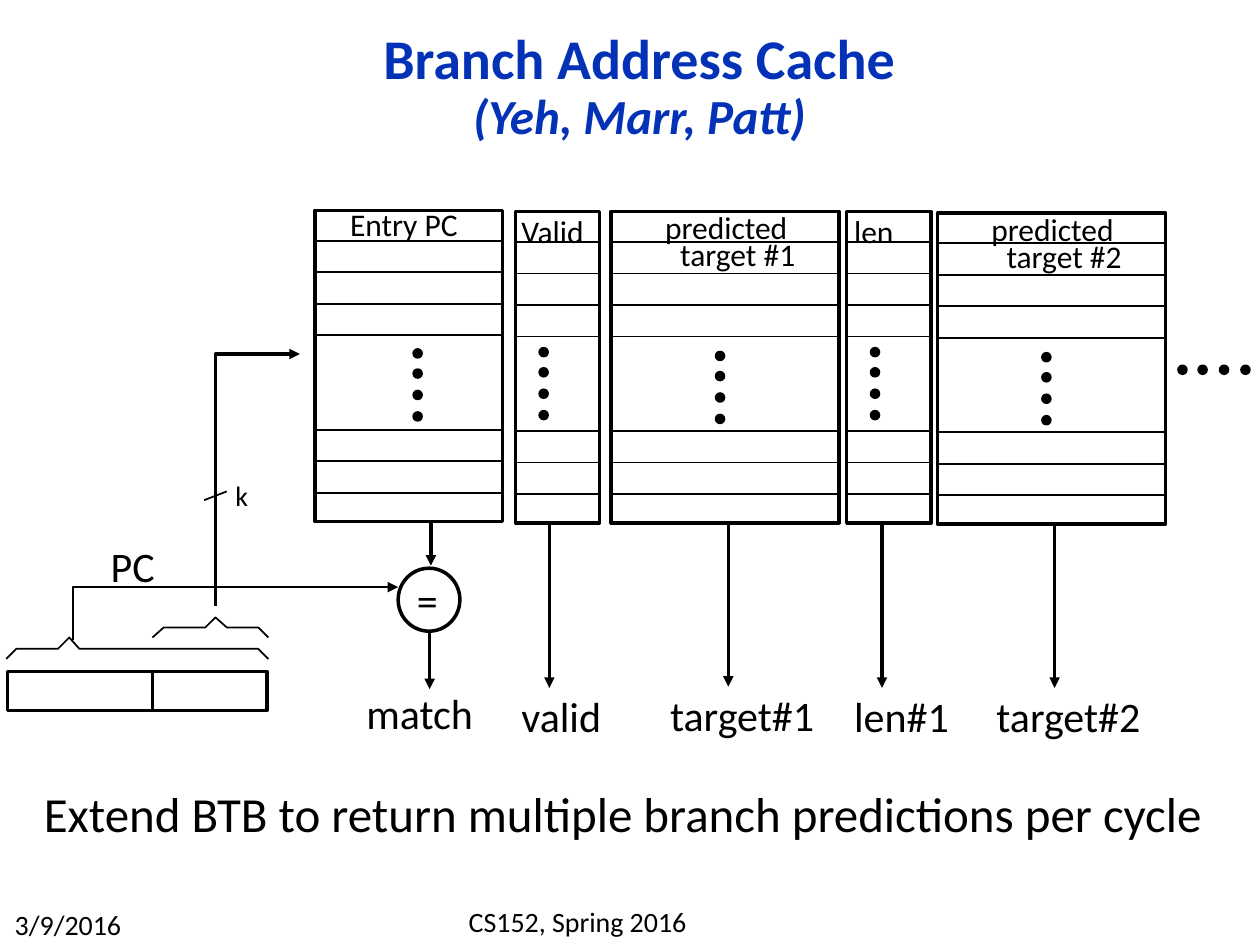
"""Build the Branch Address Cache slide."""
from typing import NamedTuple

from lxml import etree
from pptx import Presentation
from pptx.dml.color import RGBColor
from pptx.enum.shapes import MSO_CONNECTOR, MSO_SHAPE
from pptx.enum.text import MSO_ANCHOR, MSO_AUTO_SIZE, PP_ALIGN
from pptx.oxml.ns import qn
from pptx.util import Emu, Pt

LINE = MSO_CONNECTOR.STRAIGHT
RECT, OVAL = MSO_SHAPE.RECTANGLE, MSO_SHAPE.OVAL
LEFT, CENTER = PP_ALIGN.LEFT, PP_ALIGN.CENTER
MIDDLE, FIXED = MSO_ANCHOR.MIDDLE, MSO_AUTO_SIZE.NONE
PX = 9144
FONT = "Calibri"
COLORS = {"ink": "000000", "paper": "FFFFFF", "title": "0332B7"}
ROWS = (24, 49, 74, 99, 174, 199, 224)
TALL, DOT = 247, 7


class Label(NamedTuple):
    text: str
    x: int
    y: int
    w: int
    h: int
    size: int
    align: PP_ALIGN = LEFT
    wrap: bool = False


class Column(NamedTuple):
    x: int
    y: int
    w: int
    dot_x: int
    dot_y: int
    out_x: int
    out_y: int


class Path(NamedTuple):
    points: tuple
    weight: float
    arrow: bool


COLUMNS = (
    Column(250, 167, 149, 328, 277, 342, 449),
    Column(409, 168, 67, 428, 276, 436, 546),
    Column(485, 168, 181, 568, 279, 578, 545),
    Column(672, 168, 67, 691, 276, 700, 546),
    Column(744, 169, 181, 827, 280, 837, 546),
)
LABELS = (
    Label("3/9/2016", 1, 715, 106, 37, 16, CENTER),
    Label("CS152, Spring 2016", 292, 713, 333, 37, 16, CENTER, True),
    Label("PC", 78, 424, 55, 50, 24),
    Label("k", 177, 375, 30, 37, 16),
    Label("=", 321, 451, 37, 50, 24),
    Label("Entry PC", 268, 158, 107, 40, 18),
    Label("Valid", 404, 163, 71, 40, 18),
    Label("predicted", 518, 160, 119, 40, 18),
    Label("target #1", 530, 182, 113, 40, 18),
    Label("len", 668, 163, 52, 40, 18),
    Label("predicted", 777, 162, 119, 40, 18),
    Label("target #2", 789, 183, 113, 40, 18),
    Label("match", 281, 541, 106, 50, 24),
    Label("valid", 404, 543, 84, 50, 24),
    Label("target#1", 522, 542, 137, 50, 24),
    Label("len#1", 668, 543, 96, 50, 24),
    Label("target#2", 781, 543, 137, 50, 24),
    Label("Extend BTB to return multiple branch predictions per cycle",
          25, 617, 953, 57, 28, wrap=True),
)
PATHS = (
    Path(((121, 506), (130, 498), (163, 498), (171, 490), (180, 498),
          (205, 498), (213, 506)), 1, False),
    Path(((5, 523), (13, 515), (46, 515), (55, 506), (63, 515),
          (205, 515), (213, 523)), 1, False),
    Path(((171, 481), (171, 281), (238, 281)), 2, True),
    Path(((58, 508), (58, 466), (316, 466)), 1.5, True),
)


def tint(name: str) -> RGBColor:
    return RGBColor.from_string(COLORS[name])


def write(para, text: str, *, size: int, color: str = "ink",
          bold: bool = False, italic: bool = False) -> None:
    run = para.add_run()
    run.text = text
    font = run.font
    font.name, font.size = FONT, Pt(size)
    font.bold, font.italic = bold, italic
    font.color.rgb = tint(color)


def ink(item, weight: float, arrow: bool = False) -> None:
    item.line.color.rgb = tint("ink")
    item.line.width = Pt(weight)
    if arrow:
        ln = item.line._get_or_add_ln()
        etree.SubElement(ln, qn("a:tailEnd"), type="triangle")


def shape(slide, kind: MSO_SHAPE, box: tuple, fill: str, weight: float) -> None:
    item = slide.shapes.add_shape(kind, *(Emu(v * PX) for v in box))
    item.shadow.inherit = False
    item.fill.solid()
    item.fill.fore_color.rgb = tint(fill)
    ink(item, weight)


def line(slide, ends: tuple, weight: float, arrow: bool = False) -> None:
    item = slide.shapes.add_connector(LINE, *(Emu(v * PX) for v in ends))
    ink(item, weight, arrow)
    etree.SubElement(item._element.spPr, qn("a:effectLst"))


def trace(slide, path: Path) -> None:
    pen = slide.shapes.build_freeform(*path.points[0], scale=PX)
    pen.add_line_segments(path.points[1:], close=False)
    item = pen.convert_to_shape()
    item.shadow.inherit = False
    item.fill.background()
    ink(item, path.weight, path.arrow)


def label(slide, tag: Label) -> None:
    box = slide.shapes.add_textbox(*(Emu(v * PX) for v in tag[1:5]))
    box.text_frame.word_wrap = tag.wrap
    para = box.text_frame.paragraphs[0]
    para.alignment = tag.align
    write(para, tag.text, size=tag.size)


def dots(slide, x: int, y: int, across: bool = False) -> None:
    for i in range(4):
        step = i * 50 // 3
        spot = (x + step, y) if across else (x, y + step)
        shape(slide, OVAL, (*spot, DOT, DOT), "ink", 1)


def column(slide, col: Column) -> None:
    shape(slide, RECT, (col.x, col.y, col.w, TALL), "paper", 2)
    for row in ROWS:
        y = col.y + row
        line(slide, (col.x, y, col.x + col.w, y), 1)
    dots(slide, col.dot_x, col.dot_y)
    line(slide, (col.out_x, col.y + TALL, col.out_x, col.out_y), 2, True)


def head(slide) -> None:
    title = slide.shapes.title
    title.left, title.top = Emu(117 * PX), Emu(18 * PX)
    title.width, title.height = Emu(781 * PX), Emu(104 * PX)
    frame = title.text_frame
    frame.word_wrap, frame.auto_size = True, FIXED
    frame.vertical_anchor = MIDDLE
    para = frame.paragraphs[0]
    para.alignment, para.line_spacing = CENTER, 0.9
    write(para, "Branch Address Cache", size=32, color="title", bold=True)
    para.add_line_break()
    write(para, "(Yeh, Marr, Patt)", size=28, color="title",
          bold=True, italic=True)


def main() -> None:
    deck = Presentation()
    deck.slide_width, deck.slide_height = Emu(1000 * PX), Emu(750 * PX)
    slide = deck.slides.add_slide(deck.slide_layouts[5])
    head(slide)
    shape(slide, RECT, (6, 533, 206, 31), "paper", 2)
    line(slide, (121, 533, 121, 563), 2)
    line(slide, (180, 390, 162, 397), 1)
    for col in COLUMNS:
        column(slide, col)
    dots(slide, 935, 290, across=True)
    shape(slide, OVAL, (316, 451, 49, 50), "paper", 2)
    line(slide, (341, 502, 341, 547), 2, True)
    for path in PATHS:
        trace(slide, path)
    for tag in LABELS:
        label(slide, tag)
    deck.save("out.pptx")


if __name__ == "__main__":
    main()
